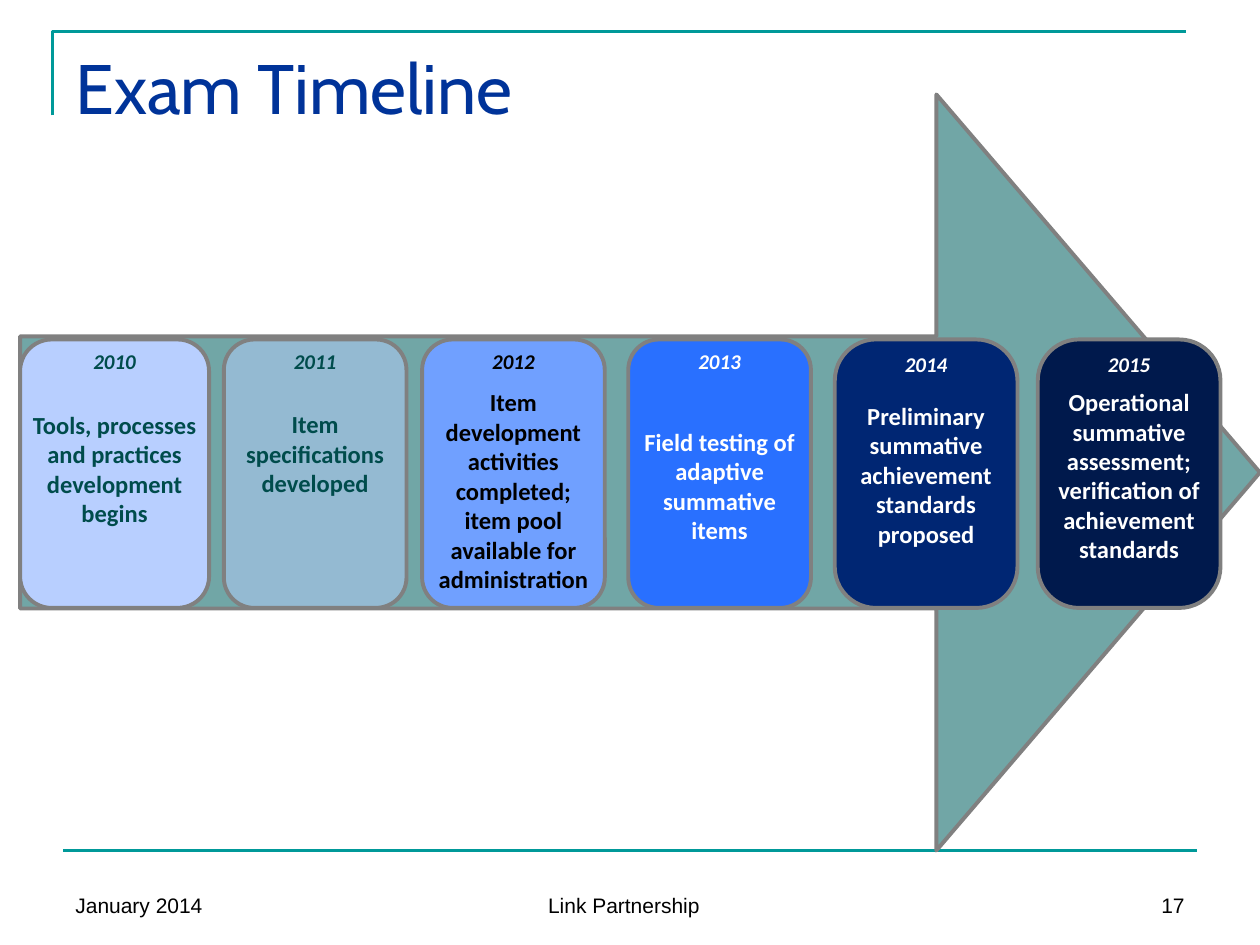
from dataclasses import dataclass

from lxml.etree import SubElement
from pptx import Presentation
from pptx.dml.color import RGBColor
from pptx.enum.shapes import MSO_CONNECTOR, MSO_SHAPE
from pptx.enum.text import MSO_ANCHOR, MSO_AUTO_SIZE, PP_ALIGN
from pptx.oxml.ns import qn
from pptx.util import Pt


@dataclass(frozen=True)
class Theme:
    rule: str = "009999"
    title: str = "003399"
    arrow: str = "71A6A6"
    outline: str = "808080"
    teal: str = "004C4C"
    black: str = "000000"
    white: str = "FFFFFF"
    title_font: str = "Cabin"
    card_font: str = "Calibri"
    footer_font: str = "Arial"
    title_size: int = 40
    body_size: int = 14
    small_size: int = 12
    rule_width: float = 1.5
    outline_width: float = 2.25


@dataclass(frozen=True)
class Box:
    left: float
    top: float
    width: float
    height: float

    def points(self):
        return [Pt(length) for length in (self.left, self.top, self.width, self.height)]


@dataclass(frozen=True)
class Milestone:
    year: str
    text: str
    offset: float
    fill: str
    color: str
    gap: float
    width: float = 104.4
    corner: float = 0.167
    opacity: int = 100


THEME = Theme()

MILESTONES = [
    Milestone("2010", "Tools, processes and practices development begins",
              0, "B8CFFF", THEME.teal, 20.5, width=108),
    Milestone("2011", "Item specifications developed",
              116.4, "B8CFFF", THEME.teal, 20.3, opacity=50),
    Milestone("2012", "Item development activities completed; item pool available for administration",
              229.7, "70A0FF", THEME.black, 7.9),
    Milestone("2013", "Field testing of adaptive summative items",
              347.5, "2970FF", THEME.white, 30.4),
    Milestone("2014", "Preliminary summative achievement standards proposed",
              465.5, "002673", THEME.white, 13.9, corner=0.225),
    Milestone("2015", "Operational summative assessment; verification of achievement standards",
              581.5, "00194C", THEME.white, 6, corner=0.225),
]


def write_text(frame, text, font, size, color, align=PP_ALIGN.LEFT,
               bold=False, italic=False, after=0):
    para = frame.add_paragraph() if frame.text else frame.paragraphs[0]
    para.alignment = align
    para.space_before = Pt(0)
    para.space_after = Pt(after)
    span = para.add_run()
    span.text = text
    span.font.name = font
    span.font.size = Pt(size)
    span.font.bold = bold
    span.font.italic = italic
    span.font.color.rgb = RGBColor.from_string(color)


def set_line(shape, color, width):
    shape.line.color.rgb = RGBColor.from_string(color)
    shape.line.width = Pt(width)


def add_outlined_shape(page, kind, box, fill, adjustments):
    shape = page.shapes.add_shape(kind, *box.points())
    shape.shadow.inherit = False
    for index, value in enumerate(adjustments):
        shape.adjustments[index] = value
    shape.fill.solid()
    shape.fill.fore_color.rgb = RGBColor.from_string(fill)
    set_line(shape, THEME.outline, THEME.outline_width)
    return shape


def set_opacity(shape, percent):
    color = shape.fill._xPr.find(qn("a:solidFill"))[0]
    SubElement(color, qn("a:alpha")).set("val", str(percent * 1000))


def add_corner_rule(page, box):
    left, top, width, height = box.points()
    builder = page.shapes.build_freeform(left, top + height)
    builder.add_line_segments([(left, top), (left + width, top)], close=False)
    corner = builder.convert_to_shape()
    corner.shadow.inherit = False
    corner.fill.background()
    set_line(corner, THEME.rule, THEME.rule_width)


def add_bottom_rule(page, box):
    left, top, width, height = box.points()
    rule = page.shapes.add_connector(MSO_CONNECTOR.STRAIGHT, left, top, left + width, top)
    SubElement(rule._element.spPr, qn("a:effectLst"))
    set_line(rule, THEME.rule, THEME.rule_width)


def place_title(page, box, text):
    title = page.shapes.title
    title.left, title.top, title.width, title.height = box.points()
    frame = title.text_frame
    frame.auto_size = MSO_AUTO_SIZE.NONE
    frame.vertical_anchor = MSO_ANCHOR.TOP
    write_text(frame, text, THEME.title_font, THEME.title_size, THEME.title)


def add_card(page, box, milestone):
    card = add_outlined_shape(page, MSO_SHAPE.ROUNDED_RECTANGLE, box,
                              milestone.fill, [milestone.corner])
    if milestone.opacity < 100:
        set_opacity(card, milestone.opacity)
    frame = card.text_frame
    frame.word_wrap = True
    frame.vertical_anchor = MSO_ANCHOR.TOP
    frame.margin_left = frame.margin_right = frame.margin_top = frame.margin_bottom = 0
    style = dict(font=THEME.card_font, color=milestone.color, align=PP_ALIGN.CENTER, bold=True)
    write_text(frame, milestone.year, size=THEME.small_size, italic=True,
               after=milestone.gap, **style)
    write_text(frame, milestone.text, size=THEME.body_size, **style)


def add_timeline(page, box):
    add_outlined_shape(page, MSO_SHAPE.RIGHT_ARROW, box, THEME.arrow, [0.36, 0.428])
    card_height = 153.4
    card_top = box.top + (box.height - card_height) / 2 + 0.7
    for milestone in MILESTONES:
        card_box = Box(box.left + milestone.offset, card_top, milestone.width, card_height)
        add_card(page, card_box, milestone)


def add_footer(page, box):
    side_width, middle_width = 168, 228
    middle_left = (box.width - middle_width) / 2
    entries = [
        ("January 2014", 0, side_width, PP_ALIGN.LEFT, 7.2),
        ("Link Partnership", middle_left, middle_width, PP_ALIGN.CENTER, 14),
        ("17", box.width - side_width, side_width, PP_ALIGN.RIGHT, 7.2),
    ]
    for text, offset, width, align, right_margin in entries:
        entry_box = Box(box.left + offset, box.top, width, box.height)
        frame = page.shapes.add_textbox(*entry_box.points()).text_frame
        frame.word_wrap = True
        frame.vertical_anchor = MSO_ANCHOR.BOTTOM
        frame.margin_right = Pt(right_margin)
        write_text(frame, text, THEME.footer_font, THEME.small_size, THEME.black, align)


def main():
    deck = Presentation()
    deck.slide_width, deck.slide_height = Pt(720), Pt(540)
    page = deck.slides.add_slide(deck.slide_layouts.get_by_name("Title Only"))
    add_corner_rule(page, Box(30, 18, 648, 48))
    add_bottom_rule(page, Box(36, 486, 648, 0))
    place_title(page, Box(36, 21.6, 648, 90), "Exam Timeline")
    add_timeline(page, Box(11.5, 54, 708.5, 432))
    add_footer(page, Box(36, 491.7, 648, 36))
    deck.save("out.pptx")


if __name__ == "__main__":
    main()
